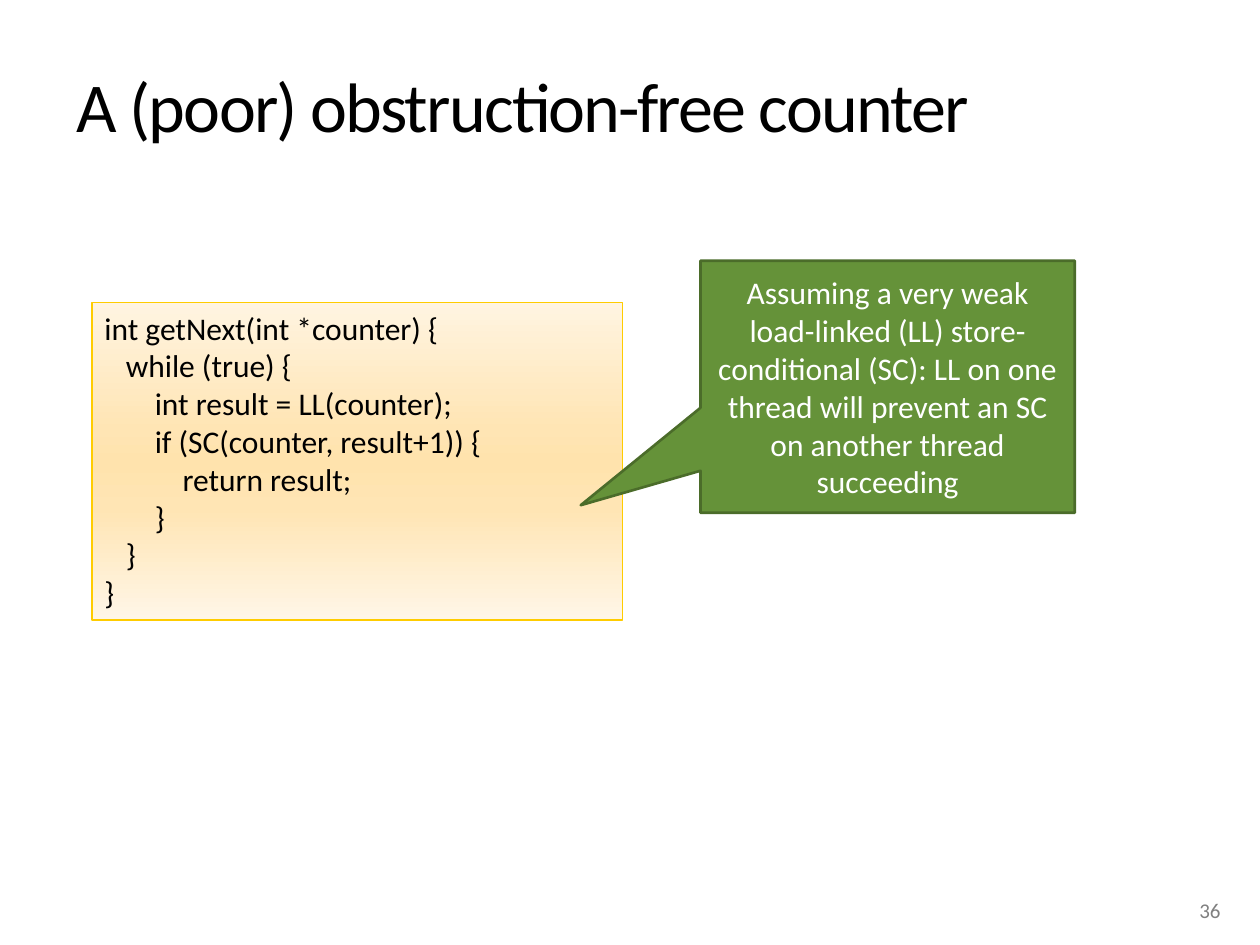
"""Build the slide on an obstruction-free counter."""
from lxml import etree
from pptx import Presentation
from pptx.dml.color import RGBColor
from pptx.enum.shapes import MSO_SHAPE
from pptx.enum.text import MSO_ANCHOR, PP_ALIGN
from pptx.oxml.ns import qn
from pptx.util import Inches, Pt

RECT, CALLOUT = MSO_SHAPE.RECTANGLE, MSO_SHAPE.RECTANGULAR_CALLOUT
TOP, MIDDLE, BOTTOM = MSO_ANCHOR.TOP, MSO_ANCHOR.MIDDLE, MSO_ANCHOR.BOTTOM
LEFT, CENTER = PP_ALIGN.LEFT, PP_ALIGN.CENTER


def paint(target, color):
    target.rgb = RGBColor.from_string(color)


def write(shape, lines, size, color, anchor=TOP, align=LEFT):
    frame = shape.text_frame
    frame.word_wrap = True
    frame.vertical_anchor = anchor
    for i, (indent, text) in enumerate(lines):
        para = frame.add_paragraph() if i else frame.paragraphs[0]
        para.alignment = align
        if indent:
            para._p.get_or_add_pPr().set("marL", str(Inches(indent)))
        run = para.add_run()
        run.text = text
        run.font.name = "Calibri"
        run.font.size = Pt(size)
        paint(run.font.color, color)
    return para, run


deck = Presentation()
deck.slide_width, deck.slide_height = Inches(10), Inches(7.5)
slide = deck.slides.add_slide(deck.slide_layouts[6])
shapes = slide.shapes

title = shapes.add_textbox(Inches(0.51), Inches(0.56), Inches(8.82), Inches(0.83))
para, run = write(title, [(0, "A (poor) obstruction-free counter")], 40, "000000")
para.line_spacing = Pt(40)
run.font._element.set("spc", "-100")

number = shapes.add_textbox(Inches(9.42), Inches(6.97), Inches(0.5), Inches(0.4))
write(number, [(0, "36")], 12, "808080", BOTTOM)

code = shapes.add_shape(RECT, Inches(0.73), Inches(2.4), Inches(4.21), Inches(2.52))
code.shadow.inherit = False
code.fill.gradient()
code.fill.gradient_angle = 270
stops = code._element.spPr.find(qn("a:gradFill")).find(qn("a:gsLst"))
stops.clear()
for pos, color in [(0, "FFF4E1"), (40, "FFE5B4"), (50, "FFE3AD"),
                   (65, "FFE5B4"), (100, "FFF6E7")]:
    stop = etree.SubElement(stops, qn("a:gs"), pos=str(pos * 1000))
    etree.SubElement(stop, qn("a:srgbClr"), val=color)
paint(code.line.color, "FFCC00")
code.line.width = Pt(0.94)
write(code, [
    (0, "int getNext(int *counter) {"),
    (0.17, "while (true) {"),
    (0.4, "int result = LL(counter);"),
    (0.4, "if (SC(counter, result+1)) {"),
    (0.62, "return result;"),
    (0.4, "}"),
    (0.17, "}"),
    (0, "}"),
], 18, "000000")

note = shapes.add_shape(CALLOUT, Inches(5.56), Inches(2.07), Inches(2.97), Inches(2))
note.shadow.inherit = False
note.adjustments[0], note.adjustments[1] = -0.82, 0.47
note.fill.solid()
paint(note.fill.fore_color, "659239")
paint(note.line.color, "4B6C2A")
note.line.width = Pt(1.5)
write(note, [(0, "Assuming a very weak load-linked (LL) store-conditional (SC): "
                 "LL on one thread will prevent an SC on another thread succeeding")],
      18, "FFFFFF", MIDDLE, CENTER)

deck.save("out.pptx")
